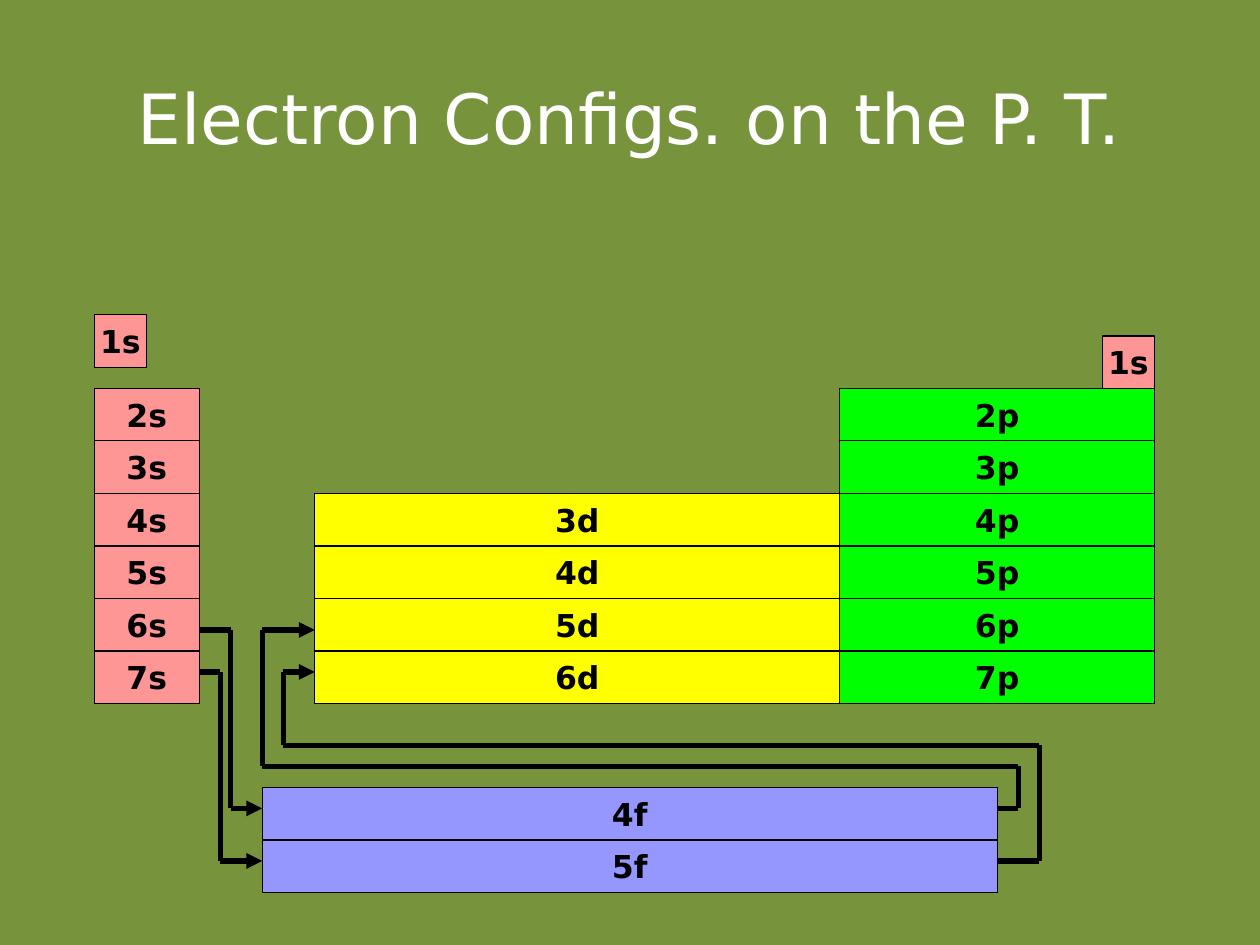
from itertools import pairwise

from lxml import etree
from pptx import Presentation
from pptx import util as u
from pptx.dml.color import RGBColor
from pptx.enum import shapes, text
from pptx.oxml.ns import qn

FONT = "DejaVu Sans"
CELL = 2.54 * 5 / 12      # side of one element's square, in cm
LEFT, TOP = 1.9, 7.83     # corner of the 2s block, in cm
S, P, D, F = "FF9696", "00FF00", "FFFF00", "9696FF"


def color(hex_string):
    return RGBColor.from_string(hex_string)


def grid_x(column):
    return u.Cm(LEFT + column * CELL)


def grid_y(row):
    return u.Cm(TOP + row * CELL)


class OrbitalSlide:
    ink = "000000"
    background = "77933C"
    title_color = "FFFFFF"

    def __init__(self, prs):
        self.slide = prs.slides.add_slide(prs.slide_layouts[5])
        fill = self.slide.background.fill
        fill.solid()
        fill.fore_color.rgb = color(self.background)

    def title(self, wording):
        heading = self.slide.shapes.title
        heading.left, heading.top = u.Cm(1.27), u.Cm(0.76)
        heading.width, heading.height = u.Cm(22.86), u.Cm(3.18)
        frame = heading.text_frame
        frame.text = wording
        frame.vertical_anchor = text.MSO_ANCHOR.MIDDLE
        self.style(frame.paragraphs[0], 39.6, self.title_color)

    def style(self, paragraph, size, hex_string, bold=False):
        paragraph.alignment = text.PP_ALIGN.CENTER
        font = paragraph.font
        font.name, font.size, font.bold = FONT, u.Pt(size), bold
        font.color.rgb = color(hex_string)

    def block(self, label, column, row, columns, fill):
        box = self.slide.shapes.add_shape(
            shapes.MSO_SHAPE.RECTANGLE, grid_x(column), grid_y(row),
            u.Cm(columns * CELL), u.Cm(CELL))
        box.shadow.inherit = False
        box.fill.solid()
        box.fill.fore_color.rgb = color(fill)
        box.line.color.rgb = color(self.ink)
        box.line.width = u.Pt(0.75)
        frame = box.text_frame
        frame.text = label
        frame.word_wrap = False
        frame.vertical_anchor = text.MSO_ANCHOR.MIDDLE
        self.style(frame.paragraphs[0], 18, self.ink, bold=True)

    def line(self, start, end, arrow=False):
        segment = self.slide.shapes.add_connector(
            shapes.MSO_CONNECTOR.STRAIGHT, grid_x(start[0]), grid_y(start[1]),
            grid_x(end[0]), grid_y(end[1]))
        segment.line.color.rgb = color(self.ink)
        segment.line.width = u.Pt(3)
        if arrow:
            etree.SubElement(segment.line._get_or_add_ln(), qn("a:tailEnd"),
                             type="triangle")
        etree.SubElement(segment._element.spPr, qn("a:effectLst"))

    def route(self, points):
        for start, end in pairwise(points):
            self.line(start, end, arrow=end == points[-1])


def main():
    prs = Presentation()
    prs.slide_width, prs.slide_height = u.Cm(25.4), u.Cm(19.05)
    page = OrbitalSlide(prs)
    page.title("Electron Configs. on the P. T.")

    # Sublevel blocks: letter, first and last level, column, row, width, fill
    sublevels = [
        ("s", 1, 1, 0, -1.4, 1, S),
        ("s", 2, 7, 0, 0, 2, S),
        ("d", 3, 6, 4.2, 2, 10, D),
        ("p", 2, 7, 14.2, 0, 6, P),
        ("s", 1, 1, 19.2, -1, 1, S),
        ("f", 4, 5, 3.2, 7.6, 14, F),
    ]
    for letter, first, last, column, row, columns, fill in sublevels:
        for level in range(first, last + 1):
            page.block(f"{level}{letter}", column, row + level - first,
                       columns, fill)

    # Filling order, s to f: exit row, turning column, entry row
    for s_row, turn, f_row in [(4.6, 2.6, 8), (5.4, 2.4, 9)]:
        page.route([(2, s_row), (turn, s_row), (turn, f_row), (3.2, f_row)])

    # Filling order, f back to d: exit row, right turn, return row, left turn, entry row
    for f_row, right, back, left, d_row in [(8, 17.6, 7.2, 3.2, 4.6),
                                            (9, 18, 6.8, 3.6, 5.4)]:
        page.route([(17.2, f_row), (right, f_row), (right, back),
                    (left, back), (left, d_row), (4.2, d_row)])

    prs.save("out.pptx")


if __name__ == "__main__":
    main()
